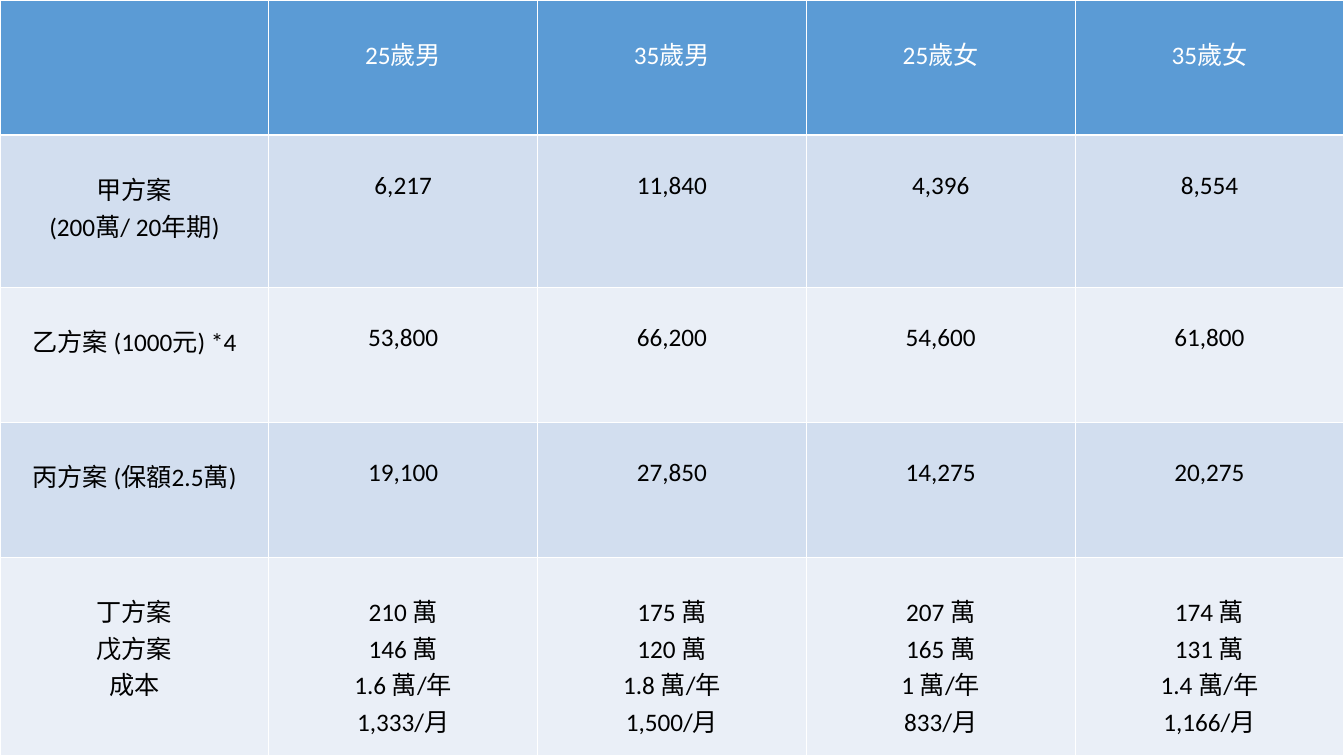
from dataclasses import dataclass

from pptx import Presentation
from pptx.dml.color import RGBColor
from pptx.enum.text import PP_ALIGN
from pptx.util import Inches, Pt

CENTER = PP_ALIGN.CENTER


@dataclass(frozen=True)
class Theme:
    font: str = "Calibri"
    size: Pt = Pt(18)
    header_fill: RGBColor = RGBColor(0x5B, 0x9B, 0xD5)
    header_text: RGBColor = RGBColor(0xFF, 0xFF, 0xFF)
    body_text: RGBColor = RGBColor(0x00, 0x00, 0x00)
    bands: tuple = (RGBColor(0xEA, 0xEF, 0xF7), RGBColor(0xD2, 0xDE, 0xEF))


THEME = Theme()

# Premiums by age and sex; a line break starts a new paragraph
PREMIUMS = [
    ["", "25歲男", "35歲男", "25歲女", "35歲女"],
    ["甲方案\n(200萬/ 20年期)", "6,217", "11,840", "4,396", "8,554"],
    ["乙方案 (1000元) *4", "53,800", "66,200", "54,600", "61,800"],
    ["丙方案 (保額2.5萬)", "19,100", "27,850", "14,275", "20,275"],
    [
        "丁方案\n戊方案\n成本",
        "210 萬\n146 萬\n1.6 萬/年\n1,333/月",
        "175 萬\n120 萬\n1.8 萬/年\n1,500/月",
        "207 萬\n165 萬\n1 萬/年\n833/月",
        "174 萬\n131 萬\n1.4 萬/年\n1,166/月",
    ],
]
ROW_HEIGHTS = [1.34, 1.51, 1.34, 1.34, 1.97]

# Slide
prs = Presentation()
prs.slide_width, prs.slide_height = Inches(13.33), Inches(7.5)
BLANK = prs.slide_layouts[6]
slide = prs.slides.add_slide(BLANK)

# Table over the whole slide, with equal columns
premium_table = slide.shapes.add_table(
    len(PREMIUMS), len(PREMIUMS[0]), 0, 0, prs.slide_width, prs.slide_height
).table
for row, height in zip(premium_table.rows, ROW_HEIGHTS):
    row.height = Inches(height)

# Cells: blue header, then alternating bands
for r, entries in enumerate(PREMIUMS):
    is_header = r == 0
    for c, entry in enumerate(entries):
        cell = premium_table.cell(r, c)
        cell.fill.solid()
        cell.fill.fore_color.rgb = THEME.header_fill if is_header else THEME.bands[r % 2]
        cell.margin_top = Inches(0.35)
        cell.text = entry
        for paragraph in cell.text_frame.paragraphs:
            paragraph.alignment = CENTER
            paragraph.font.name = THEME.font
            paragraph.font.size = THEME.size
            paragraph.font.bold = False
            paragraph.font.color.rgb = THEME.header_text if is_header else THEME.body_text

prs.save("out.pptx")
